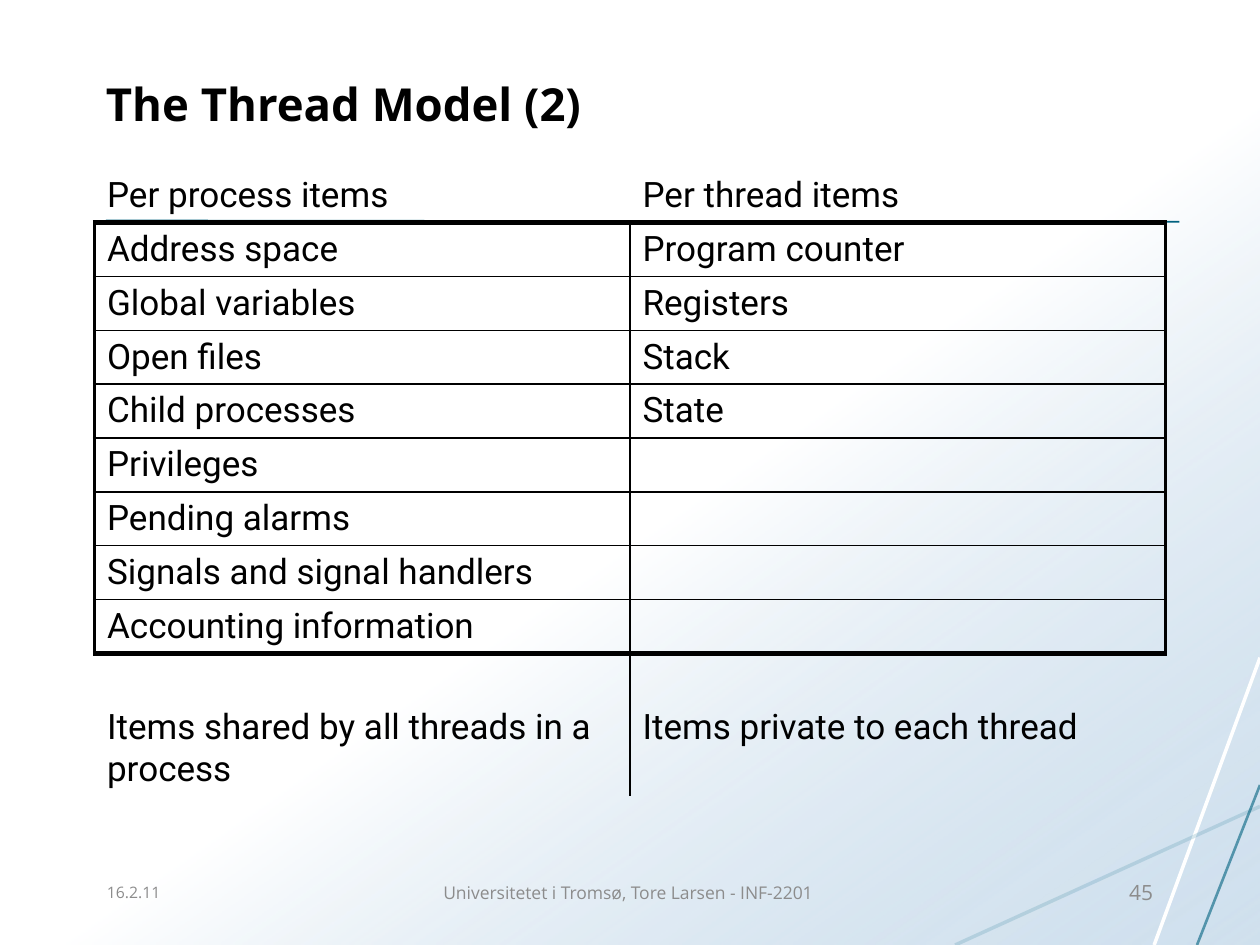
from lxml.etree import SubElement
from pptx import Presentation
from pptx.dml.color import RGBColor
from pptx.enum.shapes import MSO_CONNECTOR as Connector, MSO_SHAPE as Shape
from pptx.enum.text import MSO_ANCHOR as Anchor, PP_ALIGN as Align
from pptx.oxml.ns import qn
from pptx.util import Inches, Pt

# Content
TITLE = "The Thread Model (2)"
ROWS = [
    ("Per process items", "Per thread items"),
    ("Address space", "Program counter"),
    ("Global variables", "Registers"),
    ("Open files", "Stack"),
    ("Child processes", "State"),
    ("Privileges", ""),
    ("Pending alarms", ""),
    ("Signals and signal handlers", ""),
    ("Accounting information", ""),
    ("Items shared by all threads in a process", "Items private to each thread"),
]
# text, left, width, size, alignment
FOOTERS = [
    ("16.2.11", 0.75, 2.08, 9, Align.LEFT),
    ("Universitetet i Tromsø, Tore Larsen - INF-2201", 3.42, 3.17, 10, Align.LEFT),
    ("45", 7.17, 2.08, 12, Align.RIGHT),
]
# start, end, colour, width, opacity in percent
ACCENT_LINES = [
    ((10, 5.22), (9.16, 7.5), "FFFFFF", 2, 100),
    ((10, 6.4), (7.58, 7.5), "15718F", 2, 16),
    ((10, 6.23), (9.5, 7.5), "00617F", 1.5, 60),
    ((0.84, 1.75), (9.36, 1.76), "00617F", 1, 100),
]
THEME = {
    "heading": "Open Sans", "body": "Roboto",
    "ink": "000000", "muted": "8C8C8C", "paper": "FFFFFF", "mist": "A9C7E0",
    "title_size": 26, "table_size": 20,
    "thin": 1, "side": 2.25, "thick": 3,
}


def write(frame, text, font, size, color, bold=False, align=Align.LEFT, anchor=Anchor.TOP):
    frame.word_wrap = True
    frame.vertical_anchor = anchor
    para = frame.paragraphs[0]
    para.alignment = align
    span = para.add_run()
    span.text = text
    span.font.name, span.font.size, span.font.bold = font, Pt(size), bold
    span.font.color.rgb = RGBColor.from_string(color)


def set_opacity(color_element, percent):
    SubElement(color_element, qn("a:alpha")).set("val", str(percent * 1000))


def set_border(cell, side, width):
    line = SubElement(cell._tc.get_or_add_tcPr(), qn(f"a:ln{side}"))
    if not width:
        SubElement(line, qn("a:noFill"))
        return
    line.set("w", str(Pt(width)))
    fill = SubElement(line, qn("a:solidFill"))
    SubElement(fill, qn("a:srgbClr")).set("val", THEME["ink"])


def borders(row, column):
    """Widths for left, right, top and bottom; only the middle rows are boxed."""
    header, last = row == 0, row == len(ROWS) - 1
    outer = 0 if header or last else THEME["side"]
    inner = 0 if header else THEME["thin"]
    top = 0 if header else THEME["thick"] if row == 1 or last else THEME["thin"]
    bottom = 0 if last else THEME["thick"] if header or row == len(ROWS) - 2 else THEME["thin"]
    left, right = (outer, inner) if column == 0 else (inner, outer)
    return {"L": left, "R": right, "T": top, "B": bottom}


def add_backdrop(page, deck):
    box = page.shapes.add_shape(Shape.RECTANGLE, 0, 0, deck.slide_width, deck.slide_height)
    box.shadow.inherit = False
    box.line.fill.background()
    box.fill.gradient()
    box.fill.gradient_angle = 360 - 55
    stops = box.fill.gradient_stops
    for stop, position, color in zip(stops, (0.54, 1), (THEME["paper"], THEME["mist"])):
        stop.position = position
        stop.color.rgb = RGBColor.from_string(color)
    set_opacity(box._element.findall(f".//{qn('a:gs')}/{qn('a:srgbClr')}")[-1], 54)

    for start, end, color, width, opacity in ACCENT_LINES:
        line = page.shapes.add_connector(Connector.STRAIGHT, *map(Inches, start + end))
        line.line.color.rgb = RGBColor.from_string(color)
        line.line.width = Pt(width)
        if opacity < 100:
            set_opacity(line._element.find(f".//{qn('a:srgbClr')}"), opacity)
        SubElement(line._element.spPr, qn("a:effectLst"))


def add_title(page):
    title = page.shapes.title
    title.left, title.top, title.width, title.height = map(Inches, (0.74, 0.29, 8.5, 0.8))
    write(title.text_frame, TITLE, THEME["heading"], THEME["title_size"], THEME["ink"],
          bold=True, anchor=Anchor.BOTTOM)
    page.shapes._spTree.append(title._element)  # bring in front of the backdrop


def add_items_table(page):
    row_height, note_height = 0.42, 1.13
    height = row_height * (len(ROWS) - 1) + note_height
    table = page.shapes.add_table(len(ROWS), 2, *map(Inches, (0.75, 1.34, 8.5, height))).table
    table.first_row = table.horz_banding = False
    for r, texts in enumerate(ROWS):
        last = r == len(ROWS) - 1
        table.rows[r].height = Inches(note_height if last else row_height)
        for c, text in enumerate(texts):
            cell = table.cell(r, c)
            for side, width in borders(r, c).items():
                set_border(cell, side, width)
            cell.fill.background()
            if last:
                cell.margin_top = Inches(0.43)
            if text:
                write(cell.text_frame, text, THEME["body"], THEME["table_size"], THEME["ink"])


def add_footers(page):
    for text, left, width, size, align in FOOTERS:
        box = page.shapes.add_textbox(*map(Inches, (left, 6.83, width, 0.5)))
        write(box.text_frame, text, THEME["heading"], size, THEME["muted"],
              align=align, anchor=Anchor.MIDDLE)


def main():
    deck = Presentation()
    deck.slide_width, deck.slide_height = Inches(10), Inches(7.5)
    page = deck.slides.add_slide(deck.slide_layouts[5])
    add_backdrop(page, deck)
    add_title(page)
    add_items_table(page)
    add_footers(page)
    deck.save("out.pptx")


if __name__ == "__main__":
    main()
